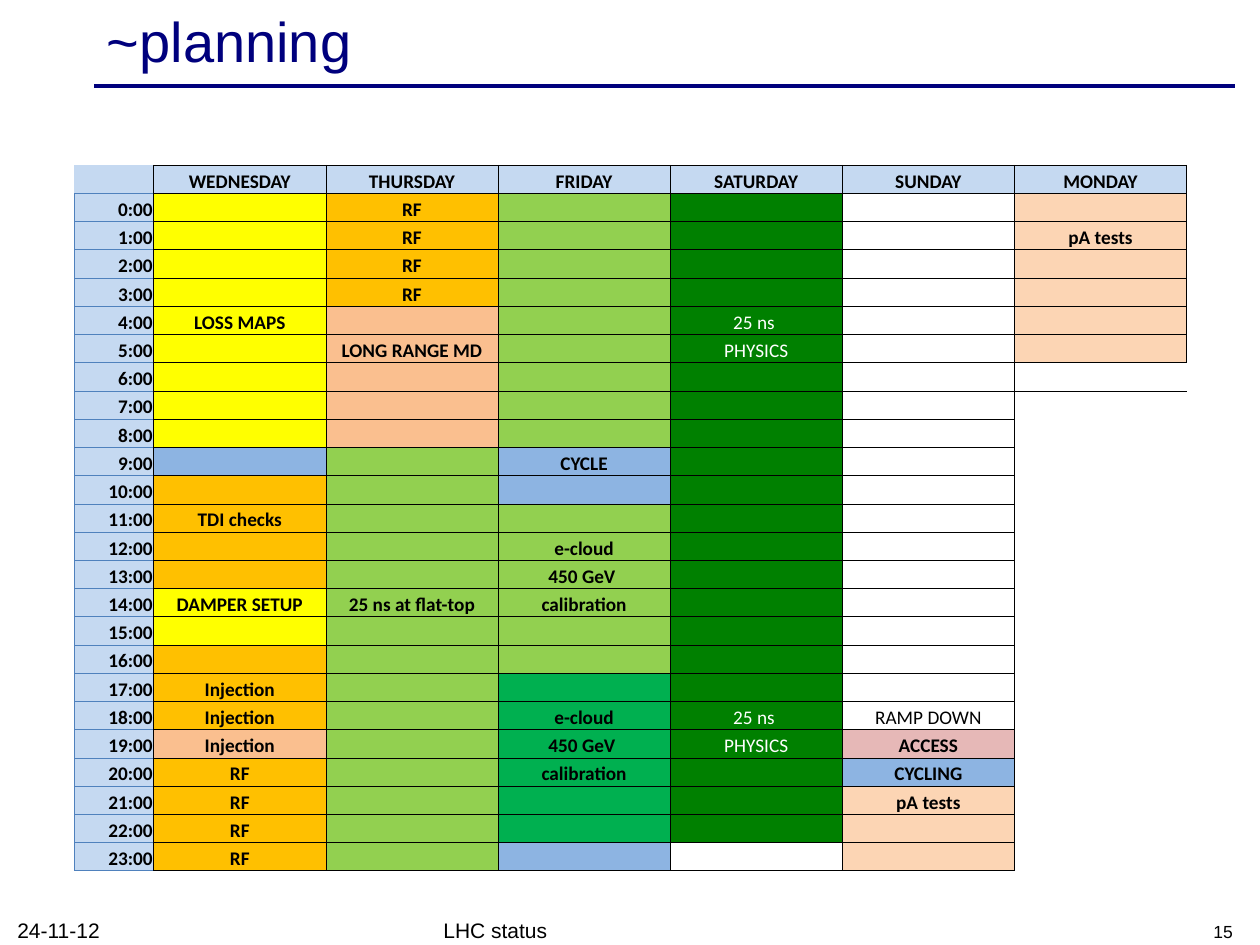
from lxml import etree
from pptx import Presentation
from pptx.dml.color import RGBColor
from pptx.enum.shapes import MSO_CONNECTOR
from pptx.enum.text import MSO_ANCHOR, PP_ALIGN
from pptx.oxml.ns import qn
from pptx.util import Cm, Pt

LEFT, CENTER, RIGHT = PP_ALIGN.LEFT, PP_ALIGN.CENTER, PP_ALIGN.RIGHT
MIDDLE, BOTTOM = MSO_ANCHOR.MIDDLE, MSO_ANCHOR.BOTTOM
STRAIGHT = MSO_CONNECTOR.STRAIGHT
NO_STYLE = "{2D5ABB26-0587-4C30-8999-92F81FD0307C}"

COLORS = {
    "navy": "00007D", "black": "000000", "white": "FFFFFF", "rule": "4F81BD",
    "header": "C5D9F1", "yellow": "FFFF00", "amber": "FFC000", "lime": "92D050",
    "green": "00B050", "forest": "008000", "blue": "8DB4E2", "salmon": "FABF8F",
    "peach": "FCD5B4", "rose": "E6B8B7",
}

# Per day: colour blocks as (colour, hours), then the label at each hour
DAYS = {
    "WEDNESDAY": (
        [("yellow", 9), ("blue", 1), ("amber", 4), ("yellow", 2), ("amber", 3),
         ("salmon", 1), ("amber", 4)],
        {4: "LOSS MAPS", 11: "TDI checks", 14: "DAMPER SETUP",
         17: "Injection", 18: "Injection", 19: "Injection",
         20: "RF", 21: "RF", 22: "RF", 23: "RF"}),
    "THURSDAY": (
        [("amber", 4), ("salmon", 5), ("lime", 15)],
        {0: "RF", 1: "RF", 2: "RF", 3: "RF", 5: "LONG RANGE MD",
         14: "25 ns at flat-top"}),
    "FRIDAY": (
        [("lime", 9), ("blue", 2), ("lime", 6), ("green", 6), ("blue", 1)],
        {9: "CYCLE", 12: "e-cloud", 13: "450 GeV ", 14: "calibration",
         18: "e-cloud", 19: "450 GeV ", 20: "calibration"}),
    "SATURDAY": (
        [("forest", 23), ("white", 1)],
        {4: "25 ns ", 5: "PHYSICS", 18: "25 ns ", 19: "PHYSICS"}),
    "SUNDAY": (
        [("white", 16), (None, 3), ("rose", 1), ("blue", 1), ("peach", 3)],
        {18: "RAMP DOWN", 19: "ACCESS", 20: "CYCLING", 21: "pA tests"}),
    "MONDAY": ([("peach", 6)], {1: "pA tests"}),
}


def write(frame, text, font="Arial", size=12, color="black", bold=False, align=LEFT):
    paragraph = frame.paragraphs[0]
    paragraph.alignment = align
    run = paragraph.add_run()
    run.text = text
    run.font.name = font
    run.font.size = Pt(size)
    run.font.bold = bold
    run.font.color.rgb = RGBColor.from_string(COLORS[color])


def format_cell(cell, fill, borders, text="", **text_format):
    """Fill a cell, draw its borders ({side letter: colour}) and write its text."""
    cell.margin_left = cell.margin_right = cell.margin_top = Cm(0.02)
    cell.margin_bottom = 0
    cell.vertical_anchor = BOTTOM
    if fill:
        cell.fill.solid()
        cell.fill.fore_color.rgb = RGBColor.from_string(COLORS[fill])
    else:
        cell.fill.background()
    properties = cell._tc.get_or_add_tcPr()
    sides = [side for side in "LRTB" if side in borders]
    for position, side in enumerate(sides):
        line = etree.Element(qn(f"a:ln{side}"), w=str(Pt(0.5)))
        solid = etree.SubElement(line, qn("a:solidFill"))
        etree.SubElement(solid, qn("a:srgbClr"), val=COLORS[borders[side]])
        properties.insert(position, line)
    if text:
        write(cell.text_frame, text, font="Calibri", size=11, **text_format)
    else:  # keeps the empty line from stretching the row
        etree.SubElement(cell.text_frame.paragraphs[0]._p, qn("a:endParaRPr"), sz="1100")


prs = Presentation()
prs.slide_width, prs.slide_height = Cm(25.4), Cm(19.05)
slide = prs.slides.add_slide(prs.slide_layouts[5])

# Title and the rule below it
title = slide.shapes.title
title.left, title.top, title.width, title.height = Cm(1.9), Cm(0.08), Cm(22.86), Cm(1.45)
title.text_frame.vertical_anchor = MIDDLE
write(title.text_frame, "~planning", size=32, color="navy")

title_rule = slide.shapes.add_connector(STRAIGHT, Cm(1.9), Cm(1.73), Cm(24.9), Cm(1.73))
title_rule.line.color.rgb = RGBColor.from_string(COLORS["navy"])
title_rule.line.width = Pt(2)
etree.SubElement(title_rule._element.spPr, qn("a:effectLst"))

# Footer
for text, left, width, size, align in [
    ("LHC status", 8.69, 8.05, 12, LEFT),
    ("15", 19.18, 5.92, 10, RIGHT),
    ("24-11-12", 0.1, 5.92, 12, LEFT),
]:
    footer = slide.shapes.add_textbox(Cm(left), Cm(18.4), Cm(width), Cm(0.72)).text_frame
    footer.word_wrap = True
    footer.vertical_anchor = BOTTOM
    write(footer, text, size=size, align=align)

# Schedule: one row per hour, one column per day
schedule = slide.shapes.add_table(
    25, 1 + len(DAYS), Cm(1.5), Cm(3.33), Cm(22.42), Cm(14.25)).table
schedule.first_row = schedule.horz_banding = False
schedule._tbl.tblPr.find(qn("a:tableStyleId")).text = NO_STYLE
for row in schedule.rows:
    row.height = Cm(0.57)
for index, column in enumerate(schedule.columns):
    column.width = Cm(3.47 if index else 1.6)

grid = dict.fromkeys("LRTB", "black")
format_cell(schedule.cell(0, 0), "header", {"R": "black", "B": "rule"})
for hour in range(24):
    format_cell(schedule.cell(hour + 1, 0), "header",
                {"L": "rule", "R": "black", "T": "rule", "B": "rule"},
                f"{hour}:00", bold=True, align=RIGHT)

for column, (day, (blocks, labels)) in enumerate(DAYS.items(), start=1):
    format_cell(schedule.cell(0, column), "header", grid, day, bold=True, align=CENTER)
    fills = [fill for fill, hours in blocks for _ in range(hours)]
    for hour, fill in enumerate(fills):
        format_cell(schedule.cell(hour + 1, column), fill, grid, labels.get(hour, ""),
                    color="white" if fill == "forest" else "black",
                    bold=fill not in ("forest", None), align=CENTER)
    for hour in range(len(fills), 24):
        borders = {"L": "black"}
        if hour == len(fills):
            borders["T"] = "black"
        format_cell(schedule.cell(hour + 1, column), None, borders)

prs.save("out.pptx")
